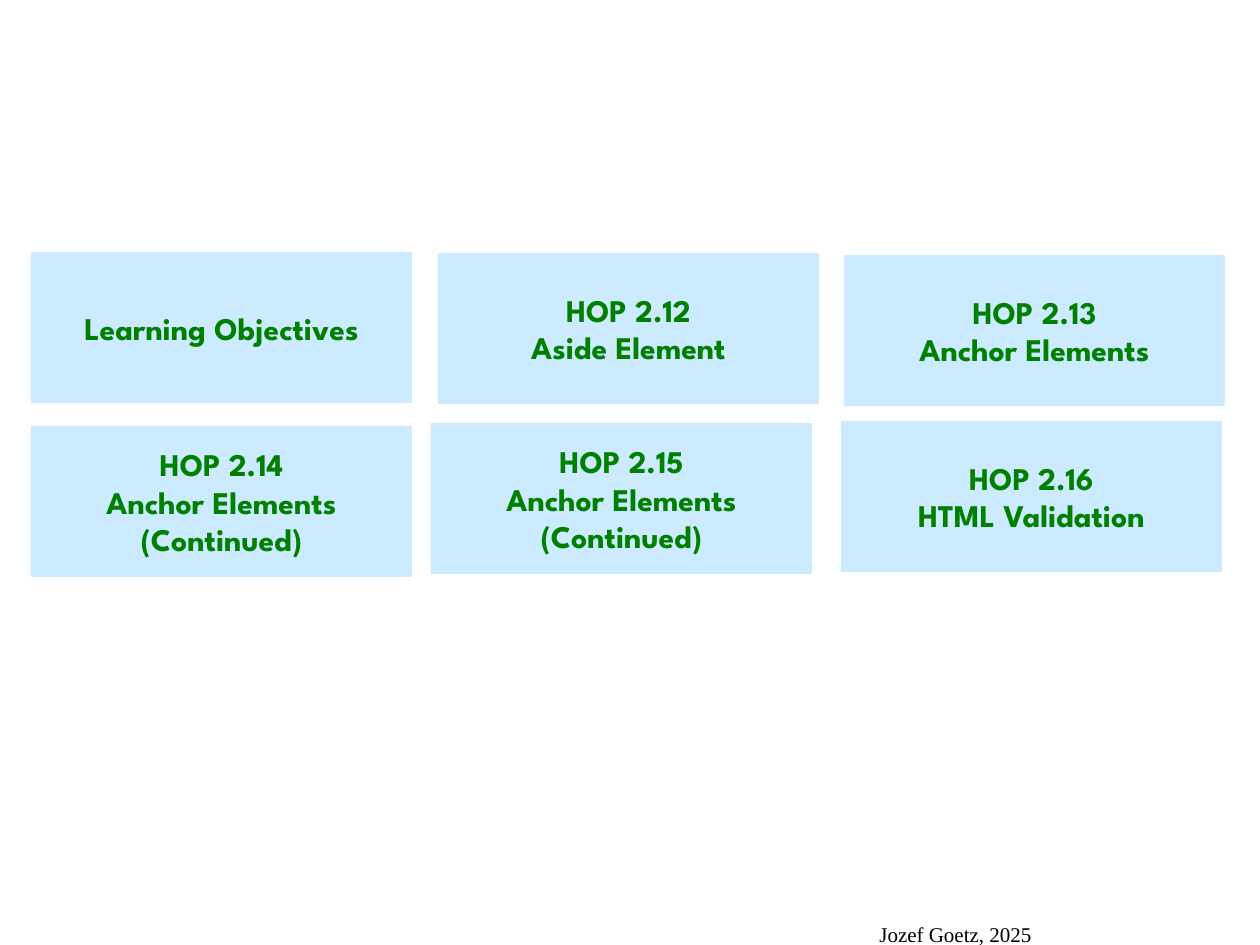
import pptx
import pptx.util
import pptx.dml.color
import pptx.enum.shapes
import pptx.enum.text

PIXEL = 914400 / 126

WHITE = pptx.dml.color.RGBColor(0xFF, 0xFF, 0xFF)
BLACK = pptx.dml.color.RGBColor(0x00, 0x00, 0x00)
PALE_BLUE = pptx.dml.color.RGBColor(0xCC, 0xEB, 0xFF)
GREEN = pptx.dml.color.RGBColor(0x00, 0x80, 0x00)

CARD_SIZE = (381, 151)
CARD_FONT = {"name": "League Spartan", "size": pptx.util.Pt(18), "bold": True}
FOOTER_FONT = {"name": "Times New Roman", "size": pptx.util.Pt(12)}

# Left, top and lines of each topic card
CARDS = [
    (31, 252, ["Learning Objectives"]),
    (438, 253, ["HOP 2.12", "Aside Element"]),
    (844, 255, ["HOP 2.13", "Anchor Elements"]),
    (31, 426, ["HOP 2.14", "Anchor Elements", "(Continued)"]),
    (431, 423, ["HOP 2.15", "Anchor Elements", "(Continued)"]),
    (841, 421, ["HOP 2.16", "HTML Validation"]),
]


def px(*lengths):
    return [pptx.util.Emu(round(length * PIXEL)) for length in lengths]


def write_lines(text_frame, lines, font_values, color):
    text_frame.word_wrap = True
    for index, line in enumerate(lines):
        paragraph = text_frame.paragraphs[0] if index == 0 else text_frame.add_paragraph()
        paragraph.alignment = pptx.enum.text.PP_ALIGN.CENTER
        run = paragraph.add_run()
        run.text = line
        for name, value in font_values.items():
            setattr(run.font, name, value)
        run.font.color.rgb = color


def add_card(slide, left, top, lines):
    shape = slide.shapes.add_shape(
        pptx.enum.shapes.MSO_SHAPE.RECTANGLE, *px(left, top, *CARD_SIZE))
    shape.shadow.inherit = False
    shape.fill.solid()
    shape.fill.fore_color.rgb = PALE_BLUE
    shape.line.fill.background()
    shape.text_frame.vertical_anchor = pptx.enum.text.MSO_ANCHOR.MIDDLE
    write_lines(shape.text_frame, lines, CARD_FONT, GREEN)


def add_footer(slide, text):
    text_box = slide.shapes.add_textbox(*px(756, 915, 399, 30))
    write_lines(text_box.text_frame, [text], FOOTER_FONT, BLACK)


def main():
    presentation = pptx.Presentation()
    presentation.slide_width, presentation.slide_height = px(1260, 945)
    slide = presentation.slides.add_slide(presentation.slide_layouts[6])

    # Background
    slide.background.fill.solid()
    slide.background.fill.fore_color.rgb = WHITE

    # Footer and topic cards
    add_footer(slide, "Jozef Goetz, 2025")
    for left, top, lines in CARDS:
        add_card(slide, left, top, lines)

    presentation.save("out.pptx")


if __name__ == "__main__":
    main()
